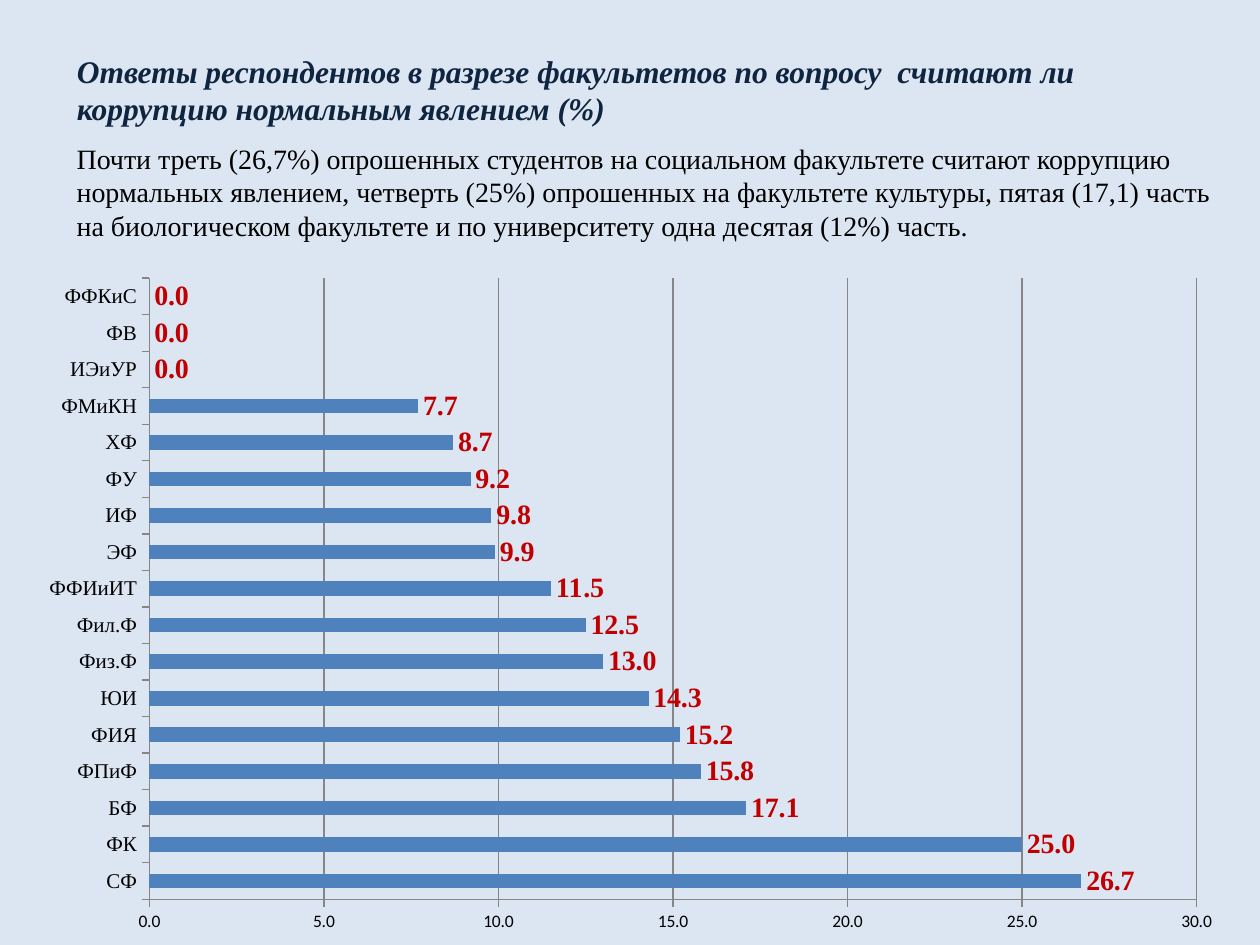
from pptx import Presentation
from pptx.chart.data import CategoryChartData
from pptx.dml.color import RGBColor
from pptx.enum.chart import XL_CHART_TYPE, XL_LABEL_POSITION, XL_TICK_MARK
from pptx.enum.text import MSO_ANCHOR, PP_ALIGN
from pptx.util import Pt

BAR = XL_CHART_TYPE.BAR_CLUSTERED
OUT_END = XL_LABEL_POSITION.OUTSIDE_END
TICK_OUT = XL_TICK_MARK.OUTSIDE
TOP = MSO_ANCHOR.TOP
LEFT = PP_ALIGN.LEFT
SERIF = "Times New Roman"
GRAY = "868686"


def rgb(code):
    return RGBColor.from_string(code)


def write(box, text, size, color="000000", bold=False, italic=False):
    frame = box.text_frame
    frame.word_wrap = True
    frame.vertical_anchor = TOP
    frame.margin_left = frame.margin_right = Pt(7.2)
    frame.margin_top = frame.margin_bottom = Pt(3.6)
    par = frame.paragraphs[0]
    par.alignment = LEFT
    run = par.add_run()
    run.text = text
    font = run.font
    font.name, font.size = SERIF, Pt(size)
    font.bold, font.italic = bold, italic
    font.color.rgb = rgb(color)


# Slide and background
deck = Presentation()
deck.slide_width, deck.slide_height = Pt(720), Pt(540)
slide = deck.slides.add_slide(deck.slide_layouts[5])
back = slide.background.fill
back.solid()
back.fore_color.rgb = rgb("DCE6F2")

# Title
title = slide.shapes.title
title.left, title.top = Pt(36.72), Pt(25.92)
title.width, title.height = Pt(657.36), Pt(51.12)
write(title, "Ответы респондентов в разрезе факультетов по вопросу  считают ли "
      "коррупцию нормальным явлением (%)", 18, "0F243E", bold=True, italic=True)

# Summary
note = slide.shapes.add_textbox(Pt(36.72), Pt(77.04), Pt(668.88), Pt(87.12))
write(note, "Почти треть (26,7%) опрошенных студентов на социальном факультете "
      "считают коррупцию нормальных явлением, четверть (25%) опрошенных на "
      "факультете культуры, пятая (17,1) часть на биологическом факультете и "
      "по университету одна десятая (12%) часть.", 16)

# Chart data, from the bottom bar up
shares = {
    "СФ": 26.7, "ФК": 25, "БФ": 17.1, "ФПиФ": 15.8, "ФИЯ": 15.2, "ЮИ": 14.3,
    "Физ.Ф": 13, "Фил.Ф": 12.5, "ФФИиИТ": 11.5, "ЭФ": 9.9, "ИФ": 9.8,
    "ФУ": 9.2, "ХФ": 8.7, "ФМиКН": 7.7, "ИЭиУР": 0, "ФВ": 0, "ФФКиС": 0,
}
data = CategoryChartData(number_format="0.0")
data.categories = list(shares)
data.add_series("Доля, %", list(shares.values()))

# Bar chart
chart = slide.shapes.add_chart(
    BAR, Pt(14.4), Pt(151.2), Pt(691.92), Pt(388.8), data).chart
chart.has_legend = chart.has_title = False
chart.font.name, chart.font.size = "Calibri", Pt(10)
chart.font.color.rgb = rgb("000000")
plot = chart.plots[0]
plot.gap_width = 150
plot.vary_by_categories = False
fill = plot.series[0].format.fill
fill.solid()
fill.fore_color.rgb = rgb("4F81BD")

# Value labels
plot.has_data_labels = True
labels = plot.data_labels
labels.show_value = True
labels.position = OUT_END
labels.number_format, labels.number_format_is_linked = "0.0", False
labels.font.name, labels.font.size = SERIF, Pt(16)
labels.font.bold = True
labels.font.color.rgb = rgb("C00000")

# Axes
names, scale = chart.category_axis, chart.value_axis
for axis in (names, scale):
    axis.major_tick_mark = TICK_OUT
    axis.format.line.color.rgb = rgb(GRAY)
names.has_major_gridlines = False
names.tick_labels.font.name = SERIF
names.tick_labels.font.size = Pt(12)
scale.minimum_scale, scale.maximum_scale, scale.major_unit = 0, 30, 5
scale.has_major_gridlines = True
scale.major_gridlines.format.line.color.rgb = rgb(GRAY)
scale.tick_labels.number_format = "0.0"
scale.tick_labels.number_format_is_linked = False

deck.save("out.pptx")
